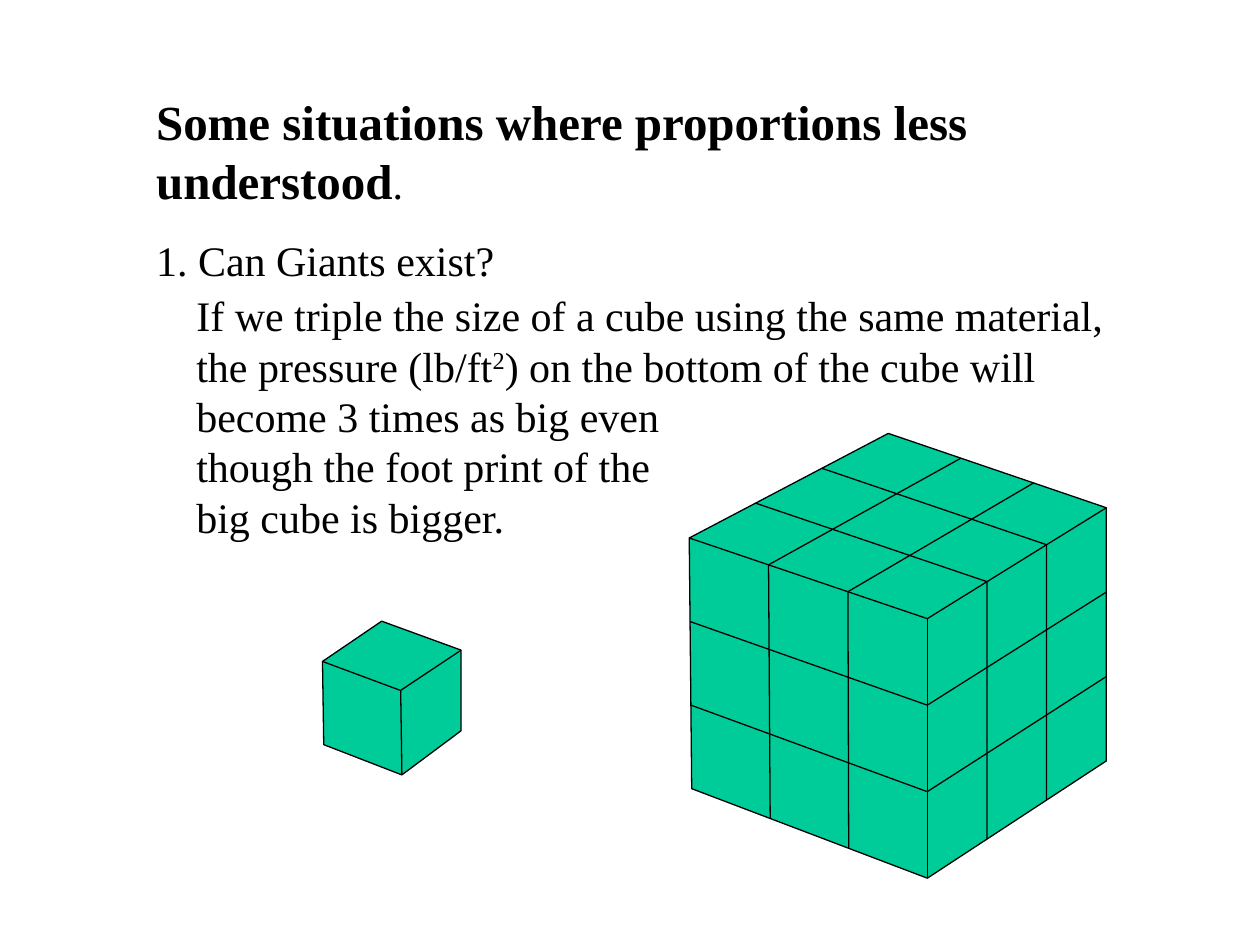
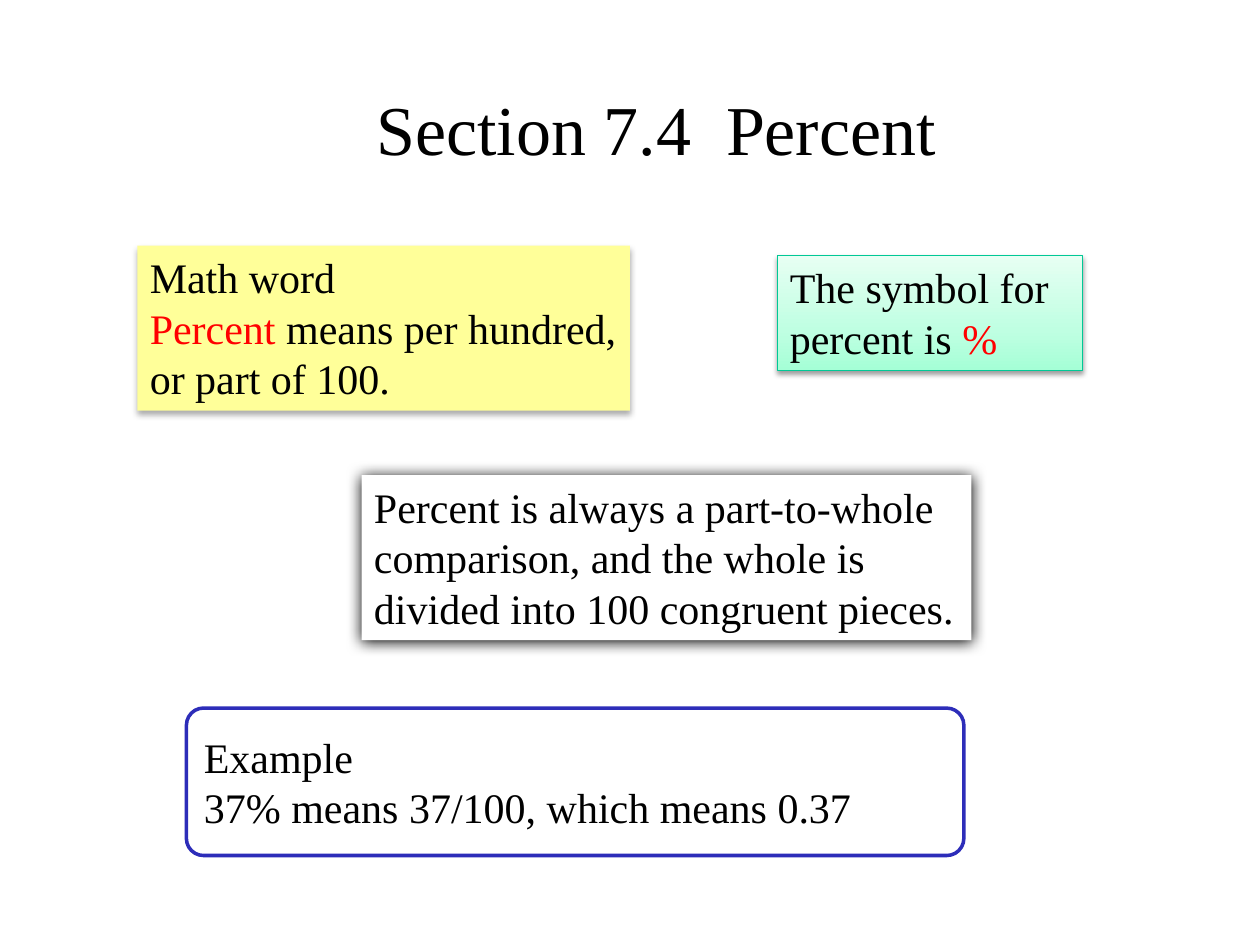
from pptx import Presentation
from pptx import util as u
from pptx.dml.color import RGBColor
from pptx.enum import shapes, text
from pptx.oxml import parse_xml
from pptx.oxml.ns import nsdecls, qn

FONT = "Times New Roman"
BLACK, WHITE, RED = "000000", "FFFFFF", "FF0000"
GREEN, YELLOW, BLUE, TEAL = "00CC99", "FFFF99", "2D2DB9", "00C896"
MINT = [(0, "A5FFD6"), (35, "BFFFE2"), (100, "E7FFF3")]


def rgb(value):
    return RGBColor.from_string(value)


def inches(values):
    return [u.Inches(v) for v in values]


def write(sp, paragraphs, size=24, wrap=True, grow=True):
    """Fill sp; each paragraph is a list of (text, options) runs."""
    tf = sp.text_frame
    tf.word_wrap = wrap
    if grow:
        tf.auto_size = text.MSO_AUTO_SIZE.SHAPE_TO_FIT_TEXT
    for i, runs in enumerate(paragraphs):
        p = tf.add_paragraph() if i else tf.paragraphs[0]
        p.alignment = text.PP_ALIGN.LEFT
        for words, opts in runs:
            for j, line in enumerate(words.split("\n")):
                if j:
                    p.add_line_break()
                r = p.add_run()
                r.text = line
                r.font.name = FONT
                r.font.size = u.Pt(opts.get("size", size))
                r.font.bold = opts.get("bold", False)
                r.font.color.rgb = rgb(opts.get("color", BLACK))
                if "base" in opts:
                    r.font._element.set("baseline", str(opts["base"] * 1000))
    return tf


def add_text(s, box, paragraphs, **kw):
    return write(s.shapes.add_textbox(*inches(box)), paragraphs, **kw)


# Cubes
def outline(s, points, closed=False):
    pts = [inches(pt) for pt in points]
    fb = s.shapes.build_freeform(*pts[0])
    fb.add_line_segments(pts[1:], close=closed)
    sp = fb.convert_to_shape()
    sp.shadow.inherit = False
    if closed:
        sp.fill.solid()
        sp.fill.fore_color.rgb = rgb(GREEN)
    else:
        sp.fill.background()
    sp.line.color.rgb = rgb(BLACK)
    sp.line.width = u.Pt(0.75)


def between(a, b, t):
    return tuple(v + (w - v) * t for v, w in zip(a, b))


def add_cube(s, origin, corners, n):
    """Draw a cube of n x n x n blocks; corners are offsets from origin."""
    back, left, left_low, front, front_low, right, right_low = [
        (origin[0] + x, origin[1] + y) for x, y in corners]
    outline(s, [back, left, left_low, front_low, right_low, right], closed=True)

    # Front edge
    cn = s.shapes.add_connector(shapes.MSO_CONNECTOR.STRAIGHT,
                                *inches(front + front_low))
    cn.line.color.rgb = rgb(BLACK)
    cn.line.width = u.Pt(0.75)
    cn._element.spPr.append(parse_xml(f"<a:effectLst {nsdecls('a')}/>"))

    # Top rim and the seams between layers
    for k in range(n):
        outline(s, [between(left, left_low, k / n),
                    between(front, front_low, k / n),
                    between(right, right_low, k / n)])
    # Seams up each side and across the top
    for k in range(1, n):
        t = k / n
        outline(s, [between(left_low, front_low, t), between(left, front, t),
                    between(back, right, t)])
        outline(s, [between(right_low, front_low, t), between(right, front, t),
                    between(back, left, t)])


def giants_slide(prs):
    s = prs.slides.add_slide(prs.slide_layouts[6])
    add_text(s, (1.46, 2.25, 7.58, 2.1), [
        [("If we triple the size of a cube using the same material, "
          "the pressure (lb/ft", {}),
         ("2", {"base": 30}),
         (") on the bottom of the cube will become 3 times as big even \n"
          "though the foot print of the", {})],
        [("big cube is bigger.", {})]])
    tf = add_text(s, (1.14, 0.68, 8.19, 1.63), [
        [("Some situations where proportions less understood",
          {"size": 28, "bold": True}), (".", {})],
        [("1. Can Giants exist?", {})]])
    tf.paragraphs[1].space_before = u.Pt(14)

    add_cube(s, (2.56, 4.93),
             [(0.47, 0), (0, 0.32), (0.01, 0.98), (0.62, 0.55),
              (0.63, 1.22), (1.1, 0.23), (1.1, 0.87)], 1)
    add_cube(s, (5.47, 3.44),
             [(1.58, 0), (0, 0.83), (0.02, 2.82), (1.89, 1.47),
              (1.89, 3.53), (3.31, 0.59), (3.31, 2.6)], 3)


# Percent cards
def add_shadow(sp, alpha, blur, dist):
    sp._element.spPr.find(qn("a:effectLst")).append(parse_xml(
        f'<a:outerShdw {nsdecls("a")} blurRad="{u.Pt(blur)}" '
        f'dist="{u.Pt(dist)}" dir="5400000" rotWithShape="0">'
        f'<a:srgbClr val="{BLACK}"><a:alpha val="{alpha * 1000}"/>'
        '</a:srgbClr></a:outerShdw>'))


def add_gradient(sp, stops):
    gs = "".join(f'<a:gs pos="{pos * 1000}"><a:srgbClr val="{c}"/></a:gs>'
                 for pos, c in stops)
    sp._element.spPr.find(qn("a:prstGeom")).addnext(parse_xml(
        f'<a:gradFill {nsdecls("a")} rotWithShape="1"><a:gsLst>{gs}</a:gsLst>'
        '<a:lin ang="16200000" scaled="0"/></a:gradFill>'))


def add_card(s, box, paragraphs, fill, line=None, width=0.75, shadow=None,
             corner=None):
    kind = shapes.MSO_SHAPE.ROUNDED_RECTANGLE if corner else shapes.MSO_SHAPE.RECTANGLE
    sp = s.shapes.add_shape(kind, *inches(box))
    if corner:
        sp.adjustments[0] = corner
    if isinstance(fill, list):
        add_gradient(sp, fill)
    else:
        sp.fill.solid()
        sp.fill.fore_color.rgb = rgb(fill)
    if line:
        sp.line.color.rgb = rgb(line)
        sp.line.width = u.Pt(width)
    else:
        sp.line.fill.background()
    sp.shadow.inherit = False
    if shadow:
        add_shadow(sp, *shadow)
    tf = write(sp, paragraphs, grow=not corner)
    tf.vertical_anchor = text.MSO_ANCHOR.MIDDLE if corner else text.MSO_ANCHOR.TOP


def percent_slide(prs):
    s = prs.slides.add_slide(prs.slide_layouts[6])
    add_text(s, (2.89, 0.63, 4.69, 0.77), [[("Section 7.4  Percent", {})]],
             size=40, wrap=False)
    # Definition
    add_card(s, (1.09, 1.95, 3.91, 1.31), [
        [("Math word", {})],
        [("Percent", {"color": RED}),
         (" means per hundred, or part of 100.", {})]],
        YELLOW, shadow=(32, 3.5, 2.2))
    # Symbol
    add_card(s, (6.17, 2.03, 2.42, 0.91), [
        [("The symbol for percent is ", {}), ("%", {"color": RED})]],
        MINT, line=TEAL, shadow=(38, 3.1, 1.6))
    # Part to whole
    add_card(s, (2.87, 3.77, 4.84, 1.31), [
        [("Percent is always a part-to-whole comparison, and the whole is "
          "divided into 100 congruent pieces.", {})]],
        WHITE, shadow=(100, 8.5, 1))
    # Example
    add_card(s, (1.48, 5.62, 6.17, 1.17), [
        [("Example", {})],
        [("37% means 37/100, which means 0.37", {})]],
        WHITE, line=BLUE, width=2, corner=0.116)


def main():
    prs = Presentation()
    prs.slide_width, prs.slide_height = inches((10, 7.5))
    giants_slide(prs)
    percent_slide(prs)
    prs.save("out.pptx")


if __name__ == "__main__":
    main()
